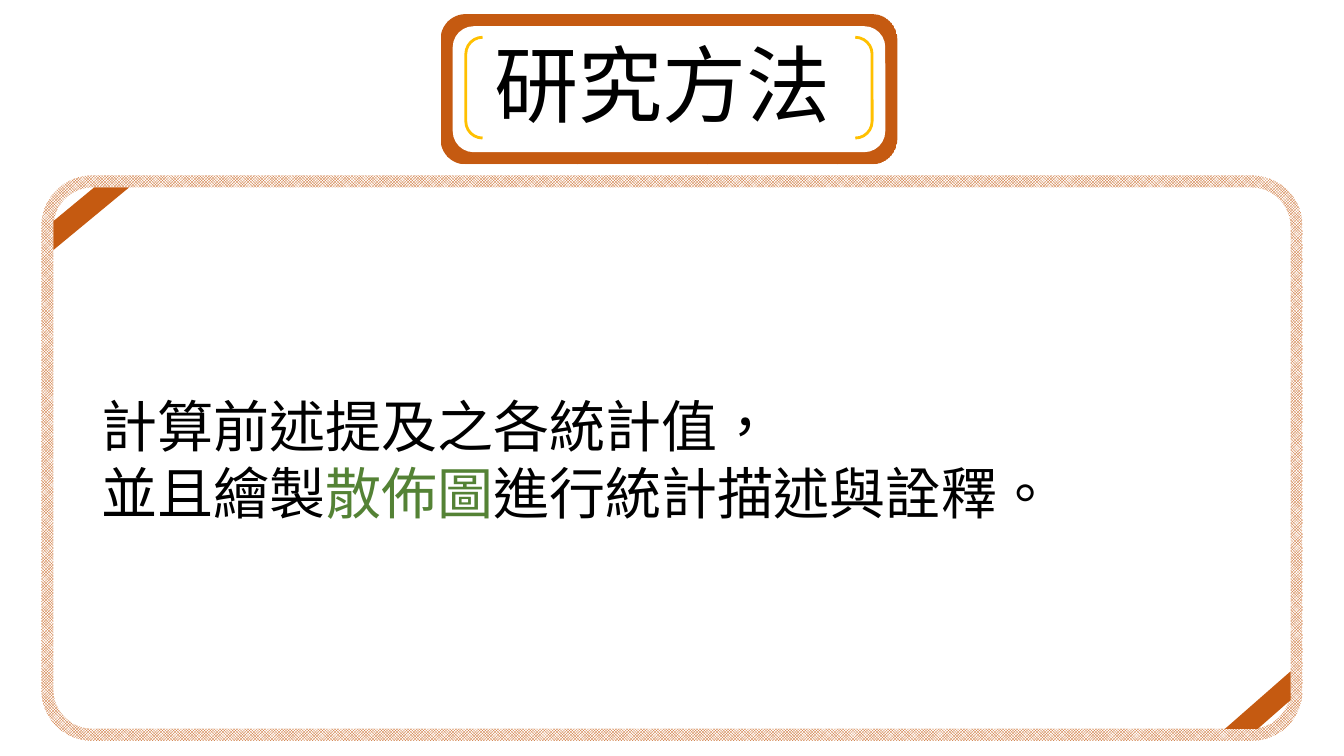
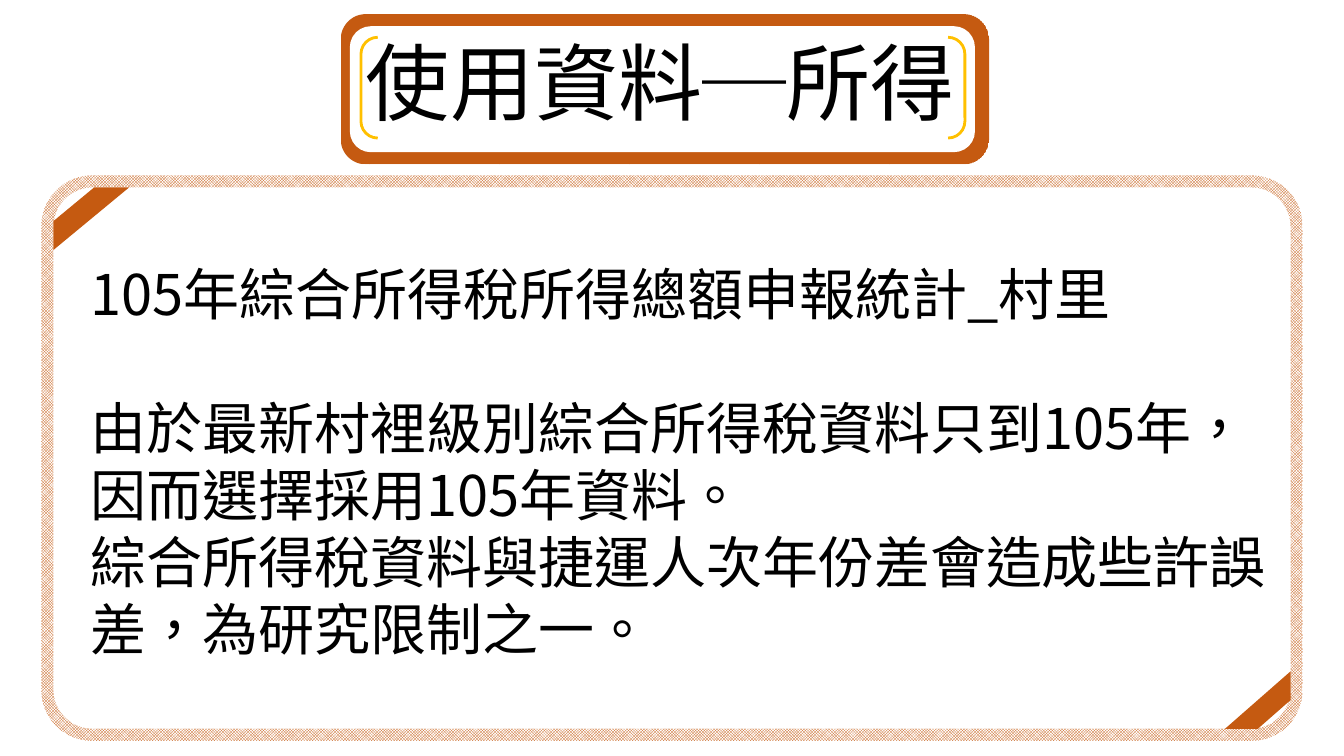
from pptx import Presentation
from pptx.dml.color import RGBColor
from pptx.enum.dml import MSO_PATTERN as Pattern
from pptx.enum.shapes import MSO_SHAPE as Shape
from pptx.enum.text import MSO_ANCHOR as Anchor, MSO_AUTO_SIZE as Fit, PP_ALIGN as Align
from pptx.oxml.ns import qn
from pptx.util import Inches, Pt
from lxml import etree

RUST = RGBColor(0xC5, 0x5A, 0x11)
GOLD = RGBColor(0xFF, 0xC0, 0x00)
GREEN = RGBColor(0x54, 0x82, 0x35)
BLACK = RGBColor(0, 0, 0)
WHITE = RGBColor(0xFF, 0xFF, 0xFF)
FONT = "Noto Sans CJK SC"
PANEL = (0.41, 1.74, 12.51, 5.61)
RIM = 0.12

# Each title frame lists left and width of its rim, face and brackets.
SLIDES = [
    {
        "title": "研究方法",
        "frame": [(4.37, 4.53), (4.49, 4.29), (4.62, 4.03)],
        "title_box": (4.8, 0.27, 3.66, 1.11),
        "body_box": (0.91, 3.83, 11.89, 1.45),
        "body": [
            (0, [("計算前述提及之各統計值，", BLACK)]),
            (0, [("並且繪製", BLACK), ("散佈圖", GREEN),
                 ("進行統計描述與詮釋。", BLACK)]),
        ],
    },
    {
        "title": "使用資料─所得",
        "frame": [(3.38, 6.43), (3.47, 6.2), (3.58, 5.99)],
        "title_box": (3.53, 0.25, 6.66, 1.11),
        "body_box": (0.8, 2.52, 11.89, 4.14),
        "body": [
            (0, [("105年綜合所得稅所得總額申報統計_村里", BLACK)]),
            (48, [("由於最新村裡級別綜合所得稅資料只到105年，因而選擇採用105年資料。", BLACK)]),
            (0, [("綜合所得稅資料與捷運人次年份差會造成些許誤差，為研究限制之一。", BLACK)]),
        ],
    },
]


def add_part(group, kind, box, color=None, pattern=None, adj=None):
    """Add a borderless shape with a solid, patterned or empty fill."""
    part = group.shapes.add_shape(kind, *map(Inches, box))
    part.shadow.inherit = False
    part.line.fill.background()
    if adj is not None:
        part.adjustments[0] = adj
    if pattern is not None:
        part.fill.patterned()
        part.fill.pattern = pattern
        part.fill.fore_color.rgb = color
        part.fill.back_color.rgb = WHITE
    elif color is not None:
        part.fill.solid()
        part.fill.fore_color.rgb = color
    else:
        part.fill.background()
    return part


def add_panel(slide, box):
    """Add the checked panel with a stripe across two corners."""
    left, top, width, height = box
    group = slide.shapes.add_group_shape()
    inner = (left + RIM, top + RIM, width - 2 * RIM, height - 2 * RIM)
    add_part(group, Shape.ROUNDED_RECTANGLE, box, RUST, Pattern.SMALL_CHECKER_BOARD, 0.09)
    add_part(group, Shape.ROUNDED_RECTANGLE, inner, WHITE, adj=0.073)
    right, base = inner[0] + inner[2], inner[1] + inner[3]
    stripe = add_part(group, Shape.DIAGONAL_STRIPE,
                      (right - 0.65, base - 0.57, 0.65, 0.57), RUST)
    stripe.rotation = 180
    add_part(group, Shape.DIAGONAL_STRIPE, (*inner[:2], 0.75, 0.62), RUST, adj=0.538)


def add_frame(slide, spans, top=0.14, height=1.49):
    """Add the title frame: rim, face and brackets."""
    group = slide.shapes.add_group_shape()
    rim, face, pair = spans
    add_part(group, Shape.ROUNDED_RECTANGLE, (rim[0], top, rim[1], height),
             RUST, Pattern.DARK_VERTICAL)
    add_part(group, Shape.ROUNDED_RECTANGLE,
             (face[0], top + RIM, face[1], height - 2 * RIM), WHITE)
    marks = add_part(group, Shape.DOUBLE_BRACKET,
                     (pair[0], top + 0.23, pair[1], 1))
    marks.line.color.rgb = GOLD
    marks.line.width = Pt(2)


def fill_text(slide, holder, box, paras, size):
    """Place a placeholder in front and fill it with coloured runs."""
    slide.shapes._spTree.append(holder._element)
    holder.left, holder.top, holder.width, holder.height = map(Inches, box)
    frame = holder.text_frame
    style = {"word_wrap": True, "auto_size": Fit.NONE, "vertical_anchor": Anchor.TOP}
    for name, value in style.items():
        setattr(frame, name, value)
    for i, (gap, runs) in enumerate(paras):
        para = frame.add_paragraph() if i else frame.paragraphs[0]
        props = para._p.get_or_add_pPr()
        props.set("marL", "0")
        props.set("indent", "0")
        etree.SubElement(props, qn("a:buNone"))
        layout = {"alignment": Align.LEFT, "space_before": Pt(gap),
                  "line_spacing": Pt(size * 1.2)}
        for name, value in layout.items():
            setattr(para, name, value)
        for text, color in runs:
            run = para.add_run()
            run.text = text
            for name, value in {"size": Pt(size), "name": FONT}.items():
                setattr(run.font, name, value)
            run.font.color.rgb = color
            props = run._r.get_or_add_rPr()
            props.set("lang", "zh-TW")
            etree.SubElement(props, qn("a:ea")).set("typeface", FONT)


def add_page(deck, page):
    slide = deck.slides.add_slide(deck.slide_layouts[1])
    add_panel(slide, PANEL)
    add_frame(slide, page["frame"])
    title, body = slide.shapes.title, slide.placeholders[1]
    fill_text(slide, title, page["title_box"], [(0, [(page["title"], BLACK)])], 60)
    fill_text(slide, body, page["body_box"], page["body"], 40)


def main():
    deck = Presentation()
    deck.slide_width, deck.slide_height = Inches(13.33), Inches(7.5)
    for page in SLIDES:
        add_page(deck, page)
    deck.save("out.pptx")


if __name__ == "__main__":
    main()
